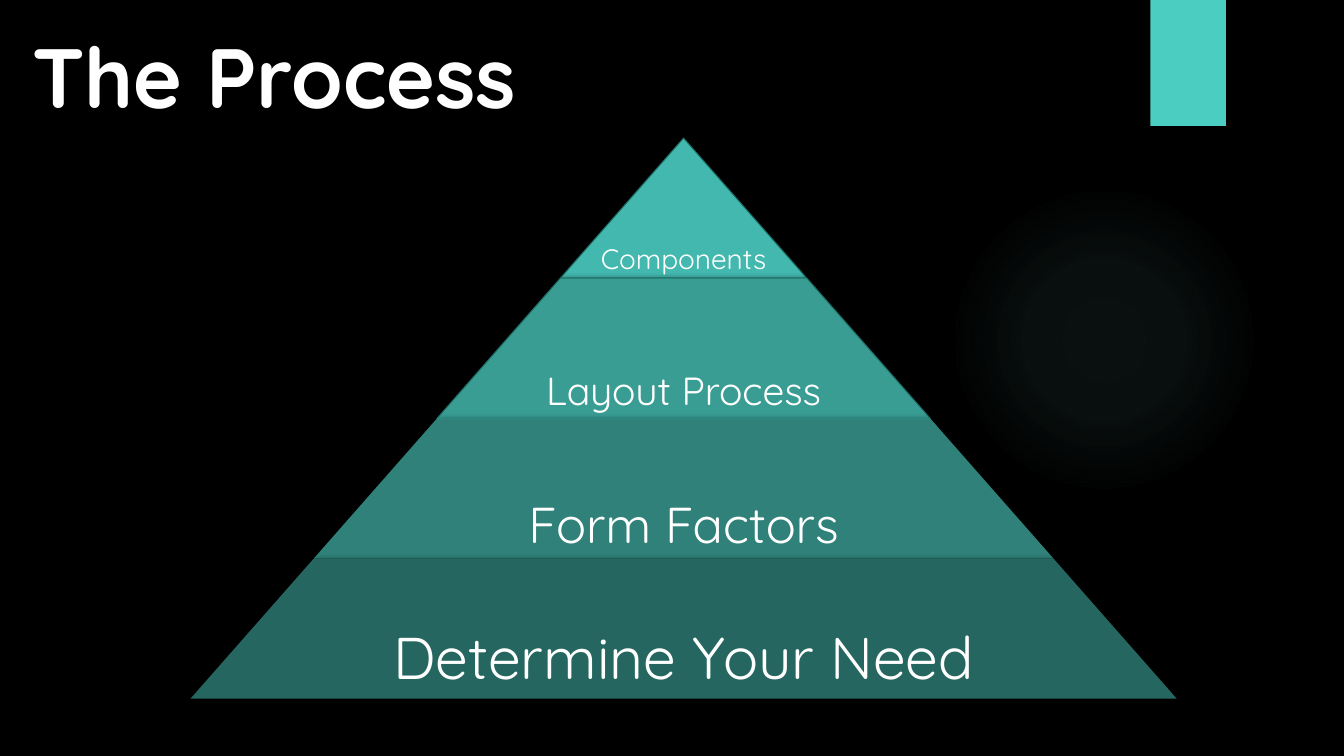
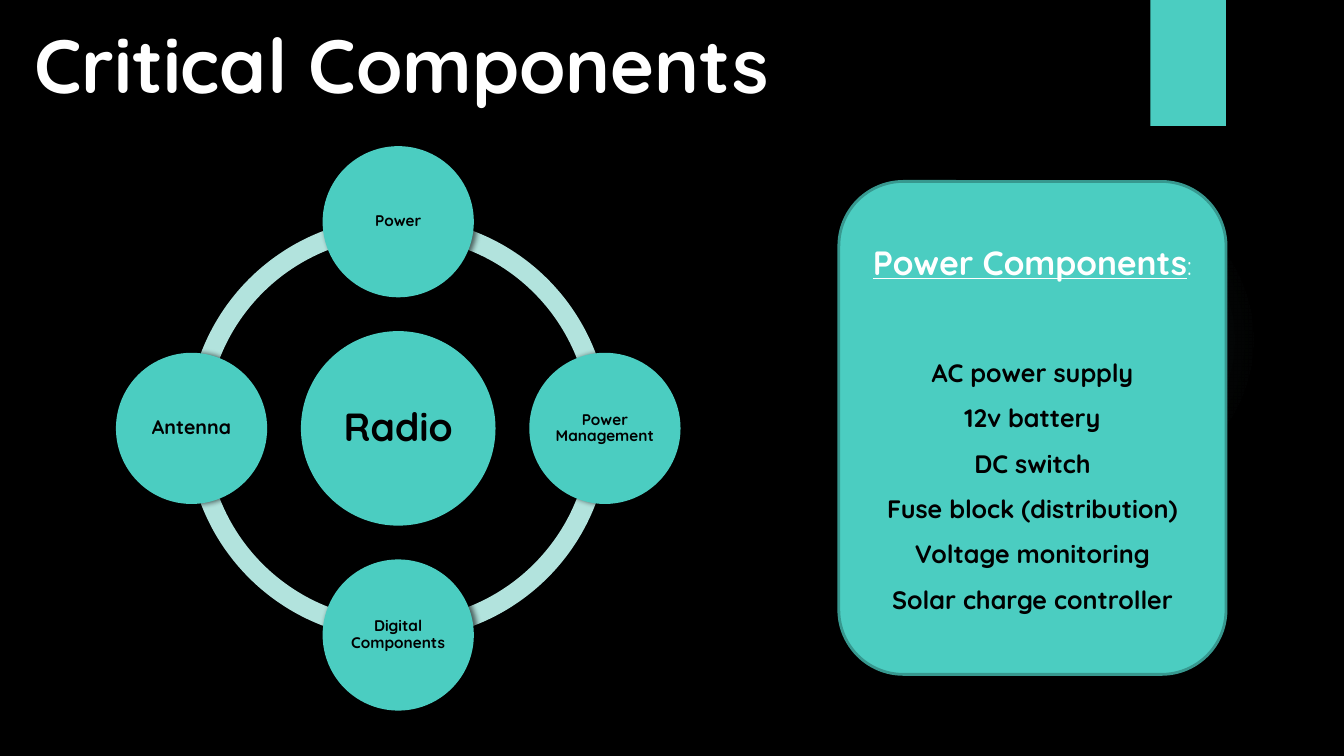
from math import cos, radians, sin

from lxml import etree
from pptx import Presentation
from pptx.dml.color import RGBColor
from pptx.enum.shapes import MSO_SHAPE as Shape
from pptx.enum.text import MSO_ANCHOR as Anchor, PP_ALIGN as Align
from pptx.oxml import parse_xml
from pptx.oxml.ns import nsdecls, qn
from pptx.util import Inches, Pt

BLACK = RGBColor(0x00, 0x00, 0x00)
WHITE = RGBColor(0xFF, 0xFF, 0xFF)
TEAL = RGBColor(0x4B, 0xCD, 0xC1)
PALE_TEAL = RGBColor(0xB2, 0xE3, 0xDD)
GLOW = RGBColor(0x93, 0xE1, 0xDA)
TIER_EDGE = RGBColor(0x1E, 0x6E, 0x66)
PANEL_EDGE = RGBColor(0x37, 0x98, 0x8F)
FONT = "Quicksand"

SLIDE_W, SLIDE_H = 13.33, 7.5
GLOW_STOPS = [(0, 7), (36, 6), (69, 0)]

TIERS = [
    dict(label="Components", size=20, opacity=90, edge=TIER_EDGE, inset=0.03, spacing=0.9),
    dict(label="Layout Process", size=28, opacity=77, edge=TIER_EDGE, inset=0.04, spacing=0.9),
    dict(label="Form Factors", size=36, opacity=63, edge=None, inset=0.05, spacing=1.0),
    dict(label="Determine Your Need", size=42, opacity=50, edge=None, inset=0.06, spacing=0.9),
]
APEX_X, APEX_Y = 6.78, 1.37
TIER_H = 1.39
TIER_STEP_W = 9.78 / len(TIERS)

HUB = ("Radio", 28)
SATELLITES = [("Power", 11), ("Power Management", 11), ("Digital Components", 11), ("Antenna", 14)]
RING_X, RING_Y, RING_R = 3.95, 4.25, 2.05
ARC_D, HUB_D, SATELLITE_D = 4.19, 1.93, 1.5

PANEL_HEADING = "Power Components"
PANEL_ITEMS = [
    "AC power supply",
    "12v battery",
    "DC switch",
    "Fuse block (distribution)",
    "Voltage monitoring",
    "Solar charge controller",
]


def write(frame, text, *, size, color=WHITE, bold=False, underline=False,
          align=Align.CENTER, spacing=1.0, after=0, same_line=False):
    paragraph = frame.paragraphs[-1]
    if paragraph.runs and not same_line:
        paragraph = frame.add_paragraph()
    if not same_line:
        paragraph.alignment = align
        paragraph.line_spacing = spacing
        paragraph.space_after = Pt(after)
    run = paragraph.add_run()
    run.text = text
    font = run.font
    font.name, font.size, font.bold, font.underline = FONT, Pt(size), bold, underline
    font.color.rgb = color


def set_frame(shape, anchor, inset=None, wrap=True):
    frame = shape.text_frame
    frame.word_wrap = wrap
    frame.vertical_anchor = anchor
    if inset is not None:
        frame.margin_left = frame.margin_right = Inches(inset)
        frame.margin_top = frame.margin_bottom = Inches(inset)
    return frame


def add_block(slide, kind, left, top, width, height, *, fill=TEAL, edge=None,
              edge_width=0.75, opacity=100, shadow=True, adjustments=()):
    block = slide.shapes.add_shape(kind, *map(Inches, (left, top, width, height)))
    for index, value in enumerate(adjustments):
        block.adjustments[index] = value
    block.fill.solid()
    block.fill.fore_color.rgb = fill
    if opacity < 100:
        color = block._element.spPr.find(qn("a:solidFill"))[0]
        etree.SubElement(color, qn("a:alpha")).set("val", str(opacity * 1000))
    if edge is None:
        block.line.fill.background()
    else:
        block.line.color.rgb = edge
        block.line.width = Pt(edge_width)
    block.shadow.inherit = False
    if shadow:
        block._element.spPr.find(qn("a:effectLst")).append(parse_xml(
            f'<a:outerShdw {nsdecls("a")} blurRad="{Pt(4)}" dist="{Pt(2)}" dir="0" rotWithShape="0">'
            f'<a:srgbClr val="{BLACK}"><a:alpha val="60000"/></a:srgbClr></a:outerShdw>'))
    return block


def add_disc(slide, center_x, center_y, diameter, label, size, inset):
    disc = add_block(slide, Shape.OVAL, center_x - diameter / 2, center_y - diameter / 2,
                     diameter, diameter)
    write(set_frame(disc, Anchor.MIDDLE, inset), label,
          size=size, color=BLACK, bold=True, spacing=0.9)


def add_glow(slide):
    glow = add_block(slide, Shape.OVAL, 9.41, 1.83, 3.08, 3.08, shadow=False)
    stops = "".join(
        f'<a:gs pos="{place * 1000}"><a:srgbClr val="{GLOW}">'
        f'<a:alpha val="{opacity * 1000}"/></a:srgbClr></a:gs>'
        for place, opacity in GLOW_STOPS)
    gradient = parse_xml(
        f'<a:gradFill {nsdecls("a")} rotWithShape="1"><a:gsLst>{stops}</a:gsLst>'
        '<a:path path="circle"><a:fillToRect l="50000" t="50000" r="50000" b="50000"/></a:path>'
        '</a:gradFill>')
    properties = glow._element.spPr
    properties.replace(properties.find(qn("a:solidFill")), gradient)


def add_slide(deck, title, left, top, width, size):
    slide = deck.slides.add_slide(deck.slide_layouts[6])
    slide.background.fill.solid()
    slide.background.fill.fore_color.rgb = BLACK
    add_glow(slide)
    add_block(slide, Shape.RECTANGLE, 11.41, 0, 0.75, 1.25)
    heading = slide.shapes.add_textbox(*map(Inches, (left, top, width, 1.53)))
    write(set_frame(heading, Anchor.TOP), title, size=size, bold=True, align=Align.LEFT)
    return slide


def build_process(deck):
    slide = add_slide(deck, "The Process", 0.22, 0.19, 5.02, 60)
    slant = TIER_STEP_W / 2 / TIER_H
    for row, tier in enumerate(TIERS):
        width = TIER_STEP_W * (row + 1)
        block = add_block(slide, Shape.TRAPEZOID, APEX_X - width / 2, APEX_Y + row * TIER_H,
                          width, TIER_H, edge=tier["edge"], opacity=tier["opacity"],
                          adjustments=[slant])
        write(set_frame(block, Anchor.BOTTOM, tier["inset"], wrap=False), tier["label"],
              size=tier["size"], spacing=tier["spacing"])


def build_components(deck):
    slide = add_slide(deck, "Critical Components", 0.24, 0.13, 10.29, 54)
    quarter = 54
    for start in (2, 1, 0, 3):
        add_block(slide, Shape.BLOCK_ARC, RING_X - ARC_D / 2, RING_Y - ARC_D / 2, ARC_D, ARC_D,
                  fill=PALE_TEAL,
                  adjustments=[start * quarter, (start + 1) % 4 * quarter, 0.046])
    add_disc(slide, RING_X, RING_Y, HUB_D, *HUB, inset=0.04)
    for index, (label, size) in enumerate(SATELLITES):
        angle = radians(index * 360 / len(SATELLITES) - 90)
        add_disc(slide, RING_X + RING_R * cos(angle), RING_Y + RING_R * sin(angle),
                 SATELLITE_D, label, size, inset=0.02)

    panel = add_block(slide, Shape.ROUNDED_RECTANGLE, 8.32, 1.8, 3.84, 4.89,
                      edge=PANEL_EDGE, edge_width=2, shadow=False)
    frame = set_frame(panel, Anchor.MIDDLE)
    write(frame, PANEL_HEADING, size=24, bold=True, underline=True, after=43)
    write(frame, ":", size=18, same_line=True)
    for item in PANEL_ITEMS:
        write(frame, item, size=18, color=BLACK, bold=True, spacing=1.5)


def main():
    deck = Presentation()
    deck.slide_width, deck.slide_height = Inches(SLIDE_W), Inches(SLIDE_H)
    build_process(deck)
    build_components(deck)
    deck.save("out.pptx")


if __name__ == "__main__":
    main()
